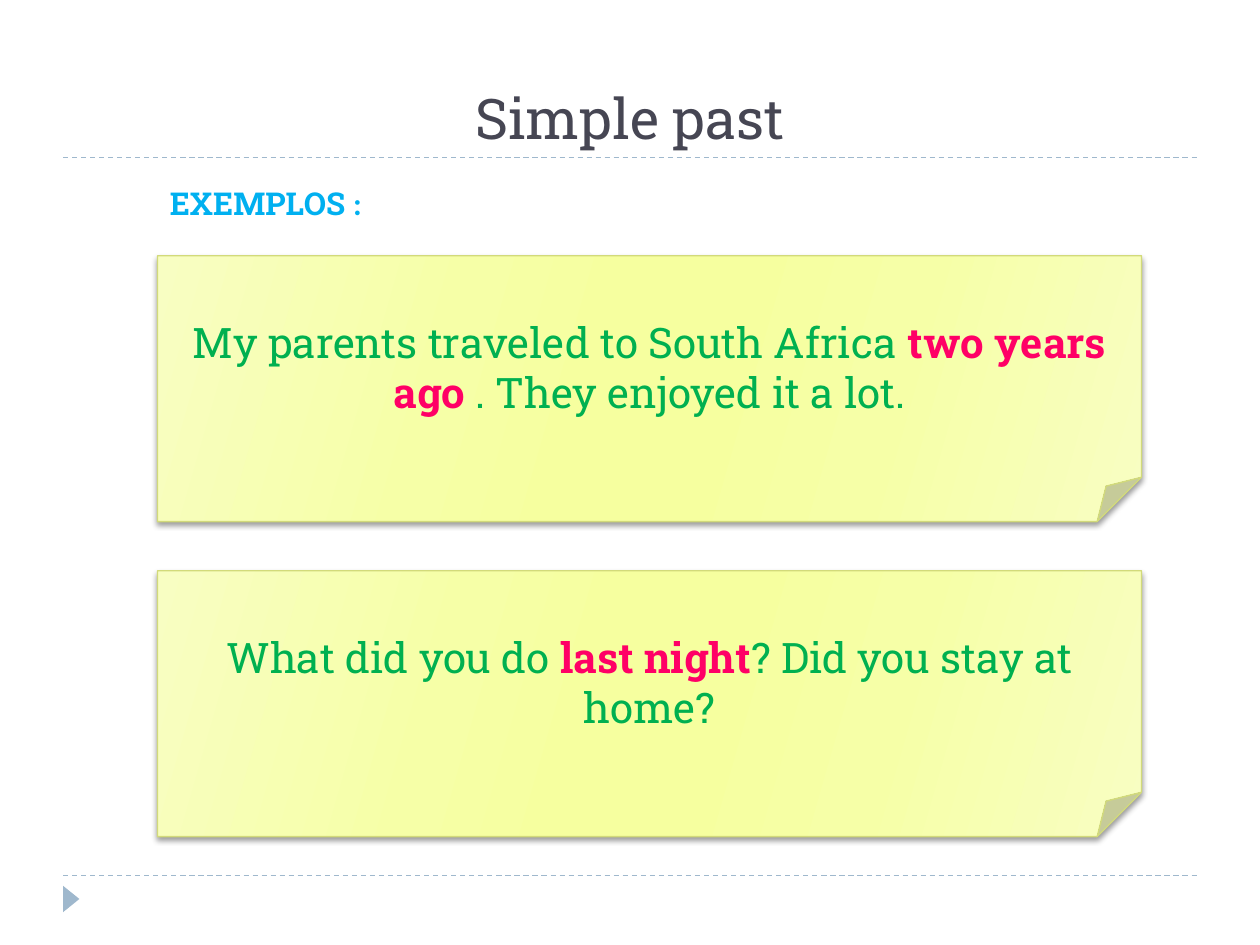
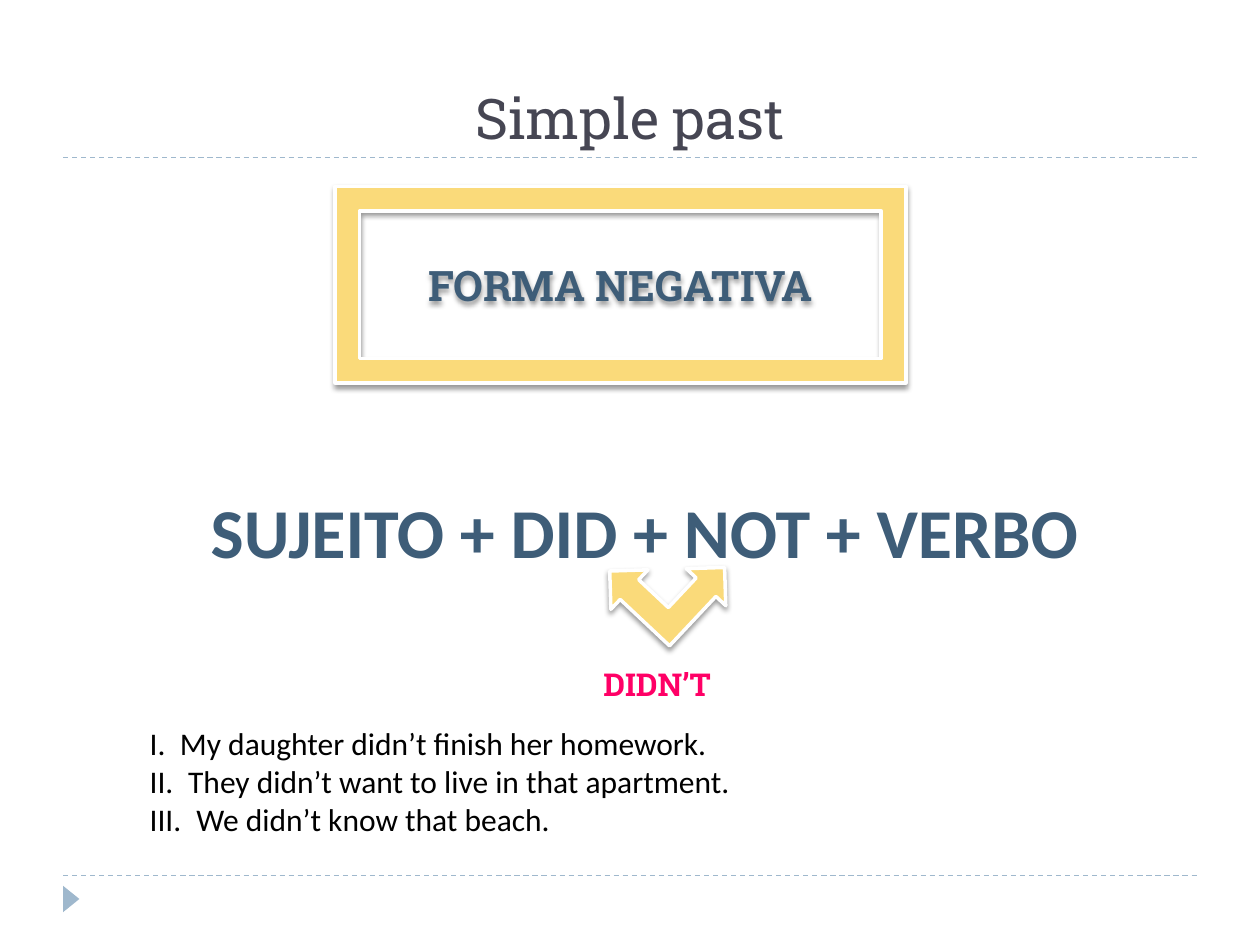
from lxml import etree
from pptx import Presentation, util as u
from pptx.dml.color import RGBColor
from pptx.enum import dml, shapes, text
from pptx.oxml import ns

TITLE_GREY = RGBColor(0x46, 0x46, 0x53)
BAND_BLUE = RGBColor(0x9F, 0xB8, 0xCD)
DARK_BLUE = RGBColor(0x3E, 0x5D, 0x78)
SKY_BLUE = RGBColor(0x00, 0xB0, 0xF0)
GREEN = RGBColor(0x00, 0xB0, 0x50)
PINK = RGBColor(0xFF, 0x00, 0x66)
YELLOW = RGBColor(0xFA, 0xDA, 0x7A)
NOTE_EDGE = RGBColor(0xD2, 0xDA, 0x7A)
BLACK = RGBColor(0, 0, 0)
WHITE = RGBColor(0xFF, 0xFF, 0xFF)
NOTE_STOPS = [(0, "F8FEC2"), (30, "F6FFA7"), (45, "F6FF9F"),
              (55, "F6FF9F"), (73, "F6FFA7"), (100, "F8FEC2")]
SLAB, SANS = "Roboto Slab", "Calibri"
CENTER = text.PP_ALIGN.CENTER


def font_format(size, color, bold=False, name=SLAB):
    """Return the format values of a run."""
    return {"size": u.Pt(size), "color": color, "bold": bold, "name": name}


TITLE = font_format(32, TITLE_GREY)
NOTE = font_format(24, GREEN)
NOTE_KEY = font_format(24, PINK, True)
HEADING = font_format(24, DARK_BLUE, True)
FORMULA = font_format(40, DARK_BLUE, True, SANS)
EXAMPLE = font_format(18, BLACK, name=SANS)


def child(parent, tag, **attributes):
    """Append a DrawingML element and return it."""
    element = etree.SubElement(parent, ns.qn(f"a:{tag}"))
    for key, value in attributes.items():
        element.set(key, str(value))
    return element


def add_runs(paragraph, runs, align=None):
    """Write (wording, format) pairs into a paragraph."""
    paragraph.alignment = align
    for wording, formats in runs:
        run = paragraph.add_run()
        run.text = wording
        for key, value in formats.items():
            if key == "color":
                run.font.color.rgb = value
            else:
                setattr(run.font, key, value)


def fill_shadow(effects):
    """Put a soft downward shadow into an effect list."""
    shadow = child(effects, "outerShdw", blurRad=u.Pt(3), dist=u.Pt(2),
                   dir=90 * 60000, algn="ctr", rotWithShape=0)
    child(child(shadow, "srgbClr", val="000000"), "alpha", val=40000)


def fill_note_gradient(fill):
    """Give a note its six-stop gradient."""
    fill.gradient()
    gradient = fill._xPr.find(ns.qn("a:gradFill"))
    stops = gradient.find(ns.qn("a:gsLst"))
    for stop in list(stops):
        stops.remove(stop)
    for position, color in NOTE_STOPS:
        child(child(stops, "gs", pos=position * 1000), "srgbClr", val=color)
    gradient.find(ns.qn("a:lin")).set("ang", str(16 * 60000))


def add_figure(slide, kind, box, fill=None, edge=None, weight=0, rotation=0):
    """Add a preset shape; one without a fill colour gets the note gradient."""
    shape = slide.shapes.add_shape(kind, *map(u.Inches, box))
    shape.rotation = rotation
    shape.shadow.inherit = False
    if fill is None:
        fill_note_gradient(shape.fill)
    else:
        shape.fill.solid()
        shape.fill.fore_color.rgb = fill
    if edge is None:
        shape.line.fill.background()
    else:
        shape.line.color.rgb = edge
        shape.line.width = u.Pt(weight)
        fill_shadow(shape._element.spPr.find(ns.qn("a:effectLst")))
    shape.text_frame.vertical_anchor = text.MSO_ANCHOR.MIDDLE
    return shape


def add_note(slide, top, runs):
    """Add a folded yellow note with an example sentence."""
    note = add_figure(slide, shapes.MSO_SHAPE.FOLDED_CORNER,
                      (1.25, top, 7.81, 2.11), edge=NOTE_EDGE, weight=0.75)
    add_runs(note.text_frame.paragraphs[0], runs, CENTER)


def add_text(slide, box, runs, align=None):
    """Add a wrapping text box and return its frame."""
    frame = slide.shapes.add_textbox(*map(u.Inches, box)).text_frame
    frame.word_wrap = True
    add_runs(frame.paragraphs[0], runs, align)
    return frame


def add_tab(paragraph, position):
    """Set one left tab stop, in inches."""
    tabs = child(paragraph._p.get_or_add_pPr(), "tabLst")
    child(tabs, "tab", pos=u.Inches(position), algn="l")


def add_examples(slide, box, sentences):
    """Add sentences with Roman numerals, each set off by a tab."""
    frame = add_text(slide, box, [])
    for index, sentence in enumerate(sentences):
        paragraph = frame.add_paragraph() if index else frame.paragraphs[0]
        add_tab(paragraph, 0.24 + 0.065 * index)
        add_runs(paragraph, [(f"{'I' * (index + 1)}.\t{sentence}", EXAMPLE)])


def add_dashed_line(slide, top):
    """Add a dashed line across the slide."""
    line = slide.shapes.add_connector(
        shapes.MSO_CONNECTOR.STRAIGHT, *map(u.Inches, (0.5, top, 9.5, top)))
    line.line.color.rgb = BAND_BLUE
    line.line.width = u.Pt(0.75)
    line.line.dash_style = dml.MSO_LINE.DASH
    child(line._element.spPr, "effectLst")


def add_lesson_slide(presentation):
    """Add a slide with the shared lines, marker and title."""
    slide = presentation.slides.add_slide(presentation.slide_layouts[5])
    for top in (6.95, 1.25):
        add_dashed_line(slide, top)
    add_figure(slide, shapes.MSO_SHAPE.ISOSCELES_TRIANGLE,
               (0.46, 7.07, 0.21, 0.13), BAND_BLUE, rotation=90)
    title = slide.shapes.title
    place = {"left": 0.5, "top": 0.25, "width": 9, "height": 1}
    for key, value in place.items():
        setattr(title, key, u.Inches(value))
    title.text_frame.vertical_anchor = text.MSO_ANCHOR.BOTTOM
    add_runs(title.text_frame.paragraphs[0], [("Simple past", TITLE)], CENTER)
    return slide


def add_examples_slide(presentation):
    """Build the slide with two example notes."""
    slide = add_lesson_slide(presentation)
    add_note(slide, 2.03, [("My parents traveled to South Africa ", NOTE),
                           ("two years ago ", NOTE_KEY),
                           (". They enjoyed it a lot.", NOTE)])
    add_note(slide, 4.53, [("What did you do ", NOTE),
                           ("last night", NOTE_KEY),
                           ("? Did you stay at home?", NOTE)])
    add_text(slide, (1.25, 1.41, 5.39, 0.4),
             [("EXEMPLOS ", font_format(18, SKY_BLUE, True)),
              (":", font_format(18, SKY_BLUE, True, SANS))])


def add_negative_slide(presentation):
    """Build the slide on the negative form."""
    slide = add_lesson_slide(presentation)
    frame = add_figure(slide, shapes.MSO_SHAPE.FRAME,
                       (2.66, 1.48, 4.53, 1.56), YELLOW, WHITE, 2)
    heading = frame.text_frame.paragraphs[0]
    add_runs(heading, [("FORMA NEGATIVA", HEADING)], CENTER)
    color = heading.runs[0]._r.rPr.find(ns.qn("a:solidFill"))
    effects = etree.Element(ns.qn("a:effectLst"))
    color.addnext(effects)
    fill_shadow(effects)
    add_text(slide, (0.23, 3.83, 9.77, 0.77),
             [("SUJEITO + DID + NOT + VERBO", FORMULA)], CENTER)
    add_figure(slide, shapes.MSO_SHAPE.LEFT_UP_ARROW,
               (4.87, 4.24, 0.86, 0.86), YELLOW, WHITE, 2, rotation=43.2)
    add_text(slide, (4.69, 5.23, 3.28, 0.4),
             [("DIDN’T", font_format(18, PINK, True))])
    add_examples(slide, (1.09, 5.7, 5, 1.31),
                 ["My daughter didn’t finish her homework.",
                  "They didn’t want to live in that apartment.",
                  "We didn’t know that beach."])


def main():
    """Build and save the presentation."""
    presentation = Presentation()
    presentation.slide_width = u.Inches(10)
    presentation.slide_height = u.Inches(7.5)
    add_examples_slide(presentation)
    add_negative_slide(presentation)
    presentation.save("out.pptx")


if __name__ == "__main__":
    main()
